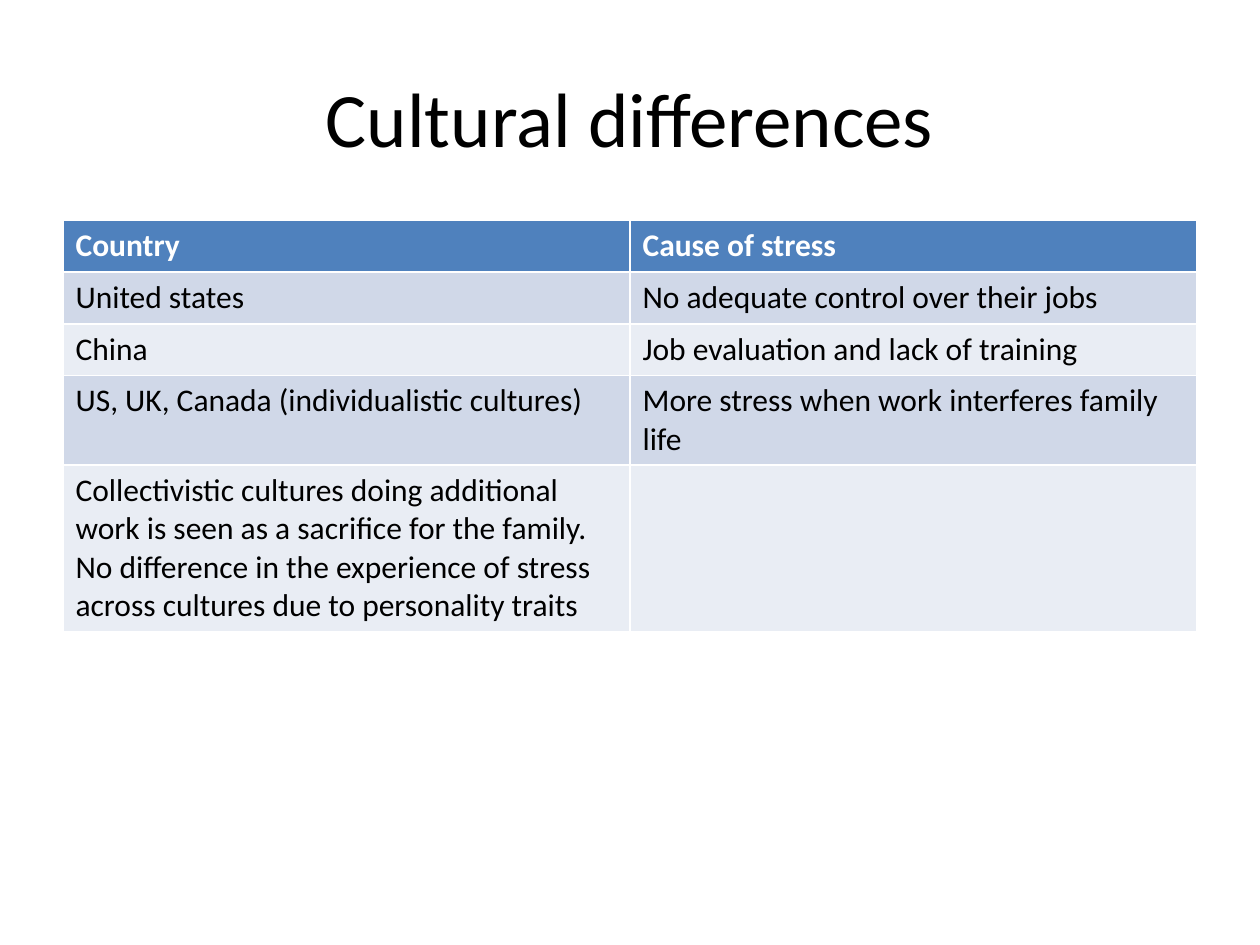
"""Build the slide on cultural differences in the causes of work stress."""
from typing import NamedTuple

from pptx import Presentation
from pptx import util as u
from pptx.dml.color import RGBColor
from pptx.enum import text

FONT = "Calibri"
COLORS = {
    "header": "4F81BD",
    "odd_row": "D0D8E8",
    "even_row": "E9EDF4",
    "header_text": "FFFFFF",
    "text": "000000",
}


class Finding(NamedTuple):
    country: str
    cause: str


HEADINGS = Finding("Country", "Cause of stress")
FINDINGS = [
    Finding("United states", "No adequate control over their jobs"),
    Finding("China", "Job evaluation and lack of training"),
    Finding("US, UK, Canada (individualistic cultures)",
            "More stress when work interferes family life"),
    Finding("Collectivistic cultures doing additional work is seen as a "
            "sacrifice for the family.\nNo difference in the experience of "
            "stress across cultures due to personality traits", ""),
]


def format_text(frame, size: float, color: str, bold: bool = False) -> None:
    for paragraph in frame.paragraphs:
        for run in paragraph.runs:
            run.font.name = FONT
            run.font.size = u.Pt(size)
            run.font.bold = bold
            run.font.color.rgb = RGBColor.from_string(COLORS[color])


def add_title(slide, wording: str) -> None:
    title = slide.shapes.title
    title.left, title.top = u.Inches(0.5), u.Inches(0.3)
    title.width, title.height = u.Inches(9), u.Inches(1.25)
    frame = title.text_frame
    frame.text = wording
    frame.vertical_anchor = text.MSO_ANCHOR.MIDDLE
    frame.paragraphs[0].alignment = text.PP_ALIGN.CENTER
    format_text(frame, 44, "text")


def fill_row(row, finding: Finding, fill: str, color: str, bold: bool) -> None:
    row.height = u.Inches(0.41)
    for cell, wording in zip(row.cells, finding):
        cell.fill.solid()
        cell.fill.fore_color.rgb = RGBColor.from_string(COLORS[fill])
        cell.text_frame.text = wording
        format_text(cell.text_frame, 18, color, bold)


def add_findings(slide, headings: Finding, findings: list[Finding]) -> None:
    row_count = len(findings) + 1
    table = slide.shapes.add_table(
        row_count, len(headings), u.Inches(0.5), u.Inches(1.75),
        u.Inches(9), u.Inches(0.41 * row_count)).table
    fill_row(table.rows[0], headings, "header", "header_text", True)
    for number, finding in enumerate(findings, 1):
        fill = "odd_row" if number % 2 else "even_row"
        fill_row(table.rows[number], finding, fill, "text", False)


def main() -> None:
    deck = Presentation()
    deck.slide_width, deck.slide_height = u.Inches(10), u.Inches(7.5)
    slide = deck.slides.add_slide(deck.slide_layouts.get_by_name("Title Only"))
    add_title(slide, "Cultural differences")
    add_findings(slide, HEADINGS, FINDINGS)
    deck.save("out.pptx")


if __name__ == "__main__":
    main()
